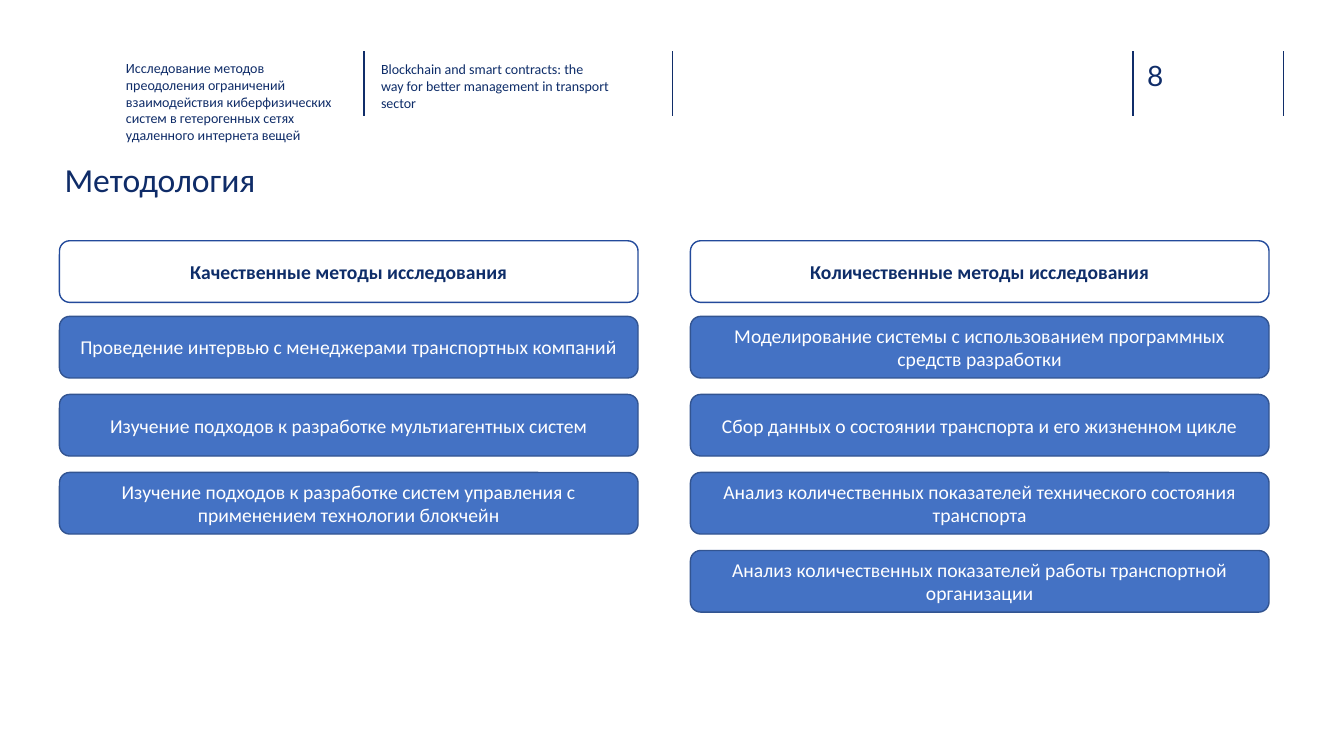
from lxml.etree import SubElement
from pptx import Presentation
from pptx.dml.color import RGBColor
from pptx.enum.shapes import MSO_CONNECTOR, MSO_SHAPE
from pptx.enum.text import MSO_ANCHOR, PP_ALIGN
from pptx.oxml.ns import qn
from pptx.util import Pt

NAVY = "0F2C68"
HEADING_NAVY = "0E2D69"
DIVIDER_NAVY = "102D69"
HEADING_BORDER = "234A9B"
METHOD_FILL = "4472C4"
METHOD_BORDER = "325491"
WHITE = "FFFFFF"

PROJECT = (
    "Исследование методов преодоления ограничений взаимодействия "
    "киберфизических систем в гетерогенных сетях удаленного интернета вещей"
)
TOPIC = "Blockchain and smart contracts: the way for better management in transport sector"
QUALITATIVE = [
    "Проведение интервью с менеджерами транспортных компаний",
    "Изучение подходов к разработке мультиагентных систем",
    "Изучение подходов к разработке систем управления с применением технологии блокчейн",
]
QUANTITATIVE = [
    "Моделирование системы с использованием программных средств разработки",
    "Сбор данных о состоянии транспорта и его жизненном цикле",
    "Анализ количественных показателей технического состояния транспорта",
    "Анализ количественных показателей работы транспортной организации",
]


def color(hex_string):
    """Turn a hex string into a colour."""
    return RGBColor.from_string(hex_string)


def style_text(paragraph, text, size, hex_string, font_name="Calibri", bold=False):
    """Write the text of a paragraph and set its font."""
    paragraph.text = text
    paragraph.font.name = font_name
    paragraph.font.size = Pt(size)
    paragraph.font.bold = bold
    paragraph.font.color.rgb = color(hex_string)


def add_text(slide, box, text, size, hex_string, font_name="Calibri"):
    """Add a wrapped text box without margins."""
    frame = slide.shapes.add_textbox(*map(Pt, box)).text_frame
    frame.word_wrap = True
    frame.margin_left = frame.margin_top = frame.margin_right = frame.margin_bottom = 0
    style_text(frame.paragraphs[0], text, size, hex_string, font_name)


def add_divider(slide, x, top, height):
    """Add a thin vertical line."""
    divider = slide.shapes.add_connector(
        MSO_CONNECTOR.STRAIGHT, Pt(x), Pt(top), Pt(x), Pt(top + height)
    )
    divider.line.color.rgb = color(DIVIDER_NAVY)
    divider.line.width = Pt(1)
    SubElement(divider._element.spPr, qn("a:effectLst"))


def add_header(slide, left, top, width, height):
    """Add the header strip with its captions, dividers and page number."""
    for offset in (170, 390.3, 719.3, width):
        add_divider(slide, left + offset, top, height)
    add_text(slide, (left, top + 5.8, 149.8, 32.4), PROJECT, 10, NAVY)
    add_text(slide, (left + 182.2, top + 6.5, 162.7, 32.4), TOPIC, 10, HEADING_NAVY)
    add_text(slide, (left + 729.4, top + 5, 52.6, 24.5), "8", 20, DIVIDER_NAVY, "Lato")


def add_card(slide, box, text, text_color, border, fill=None):
    """Add a rounded card with centred text; a heading card has no fill."""
    card = slide.shapes.add_shape(MSO_SHAPE.ROUNDED_RECTANGLE, *map(Pt, box))
    card.shadow.inherit = False
    if fill:
        card.fill.solid()
        card.fill.fore_color.rgb = color(fill)
    else:
        card.fill.background()
    card.line.color.rgb = color(border)
    card.line.width = Pt(1)
    frame = card.text_frame
    frame.word_wrap = True
    frame.vertical_anchor = MSO_ANCHOR.MIDDLE
    paragraph = frame.paragraphs[0]
    paragraph.alignment = PP_ALIGN.CENTER
    style_text(paragraph, text, 14, text_color, bold=fill is None)


def add_method_column(slide, left, top, width, heading, methods):
    """Add a heading card with evenly spaced method cards below it."""
    card_height, first_step, step = 44, 54, 55.75
    add_card(slide, (left, top, width, card_height), heading, HEADING_NAVY, HEADING_BORDER)
    for index, method in enumerate(methods):
        card_top = top + first_step + index * step
        add_card(
            slide, (left, card_top, width, card_height), method, WHITE, METHOD_BORDER, METHOD_FILL
        )


def main():
    """Build the methodology slide and save it."""
    presentation = Presentation()
    presentation.slide_width = Pt(960)
    presentation.slide_height = Pt(540)
    slide = presentation.slides.add_slide(presentation.slide_layouts[6])
    add_header(slide, 90, 36.7, 826.6, 46.1)
    add_text(slide, (46.1, 113.8, 843.8, 61.2), "Методология", 24, NAVY)
    add_method_column(slide, 42.5, 172, 413.3, "Качественные методы исследования", QUALITATIVE)
    add_method_column(slide, 493.2, 172, 413.3, "Количественные методы исследования", QUANTITATIVE)
    presentation.save("out.pptx")


if __name__ == "__main__":
    main()
